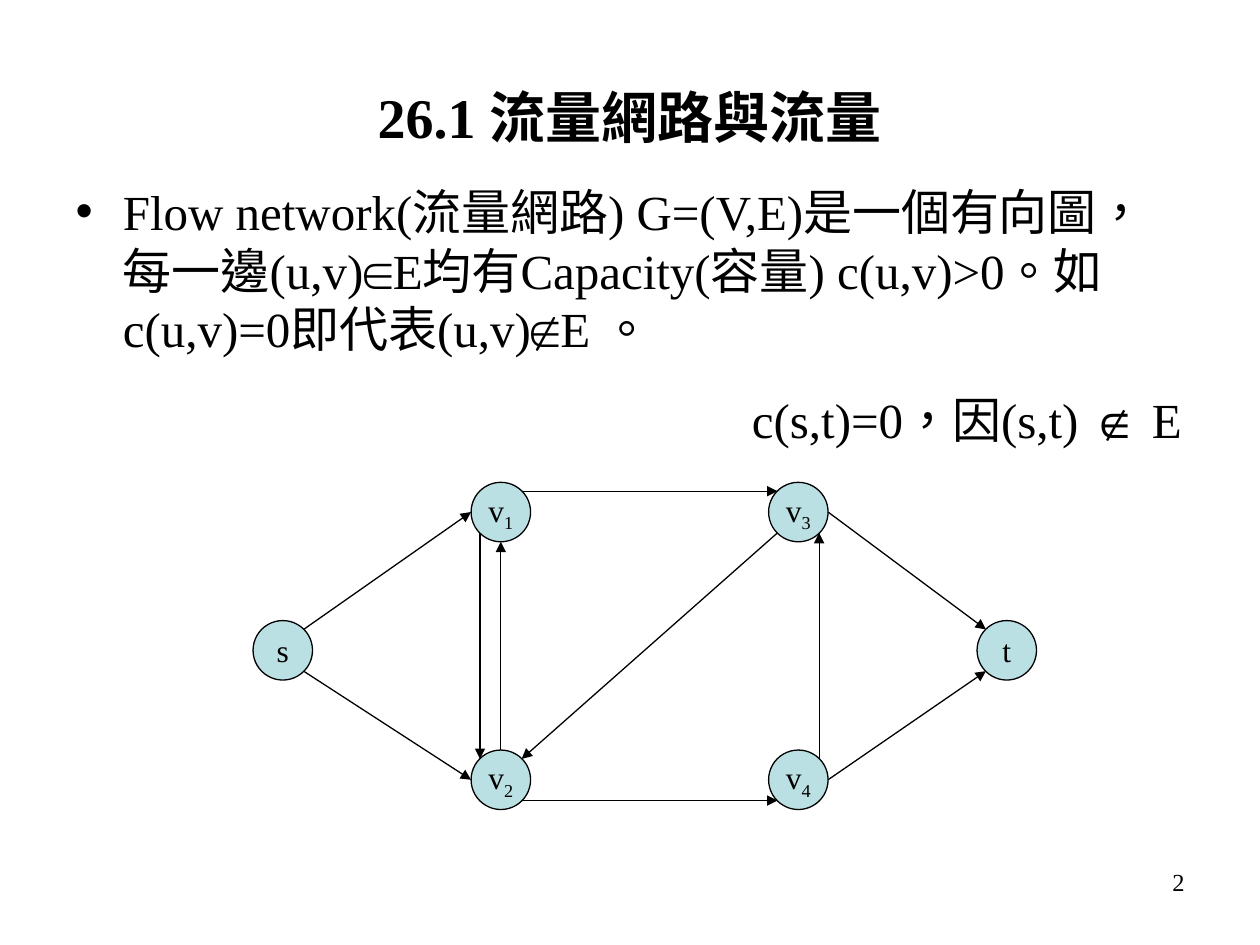
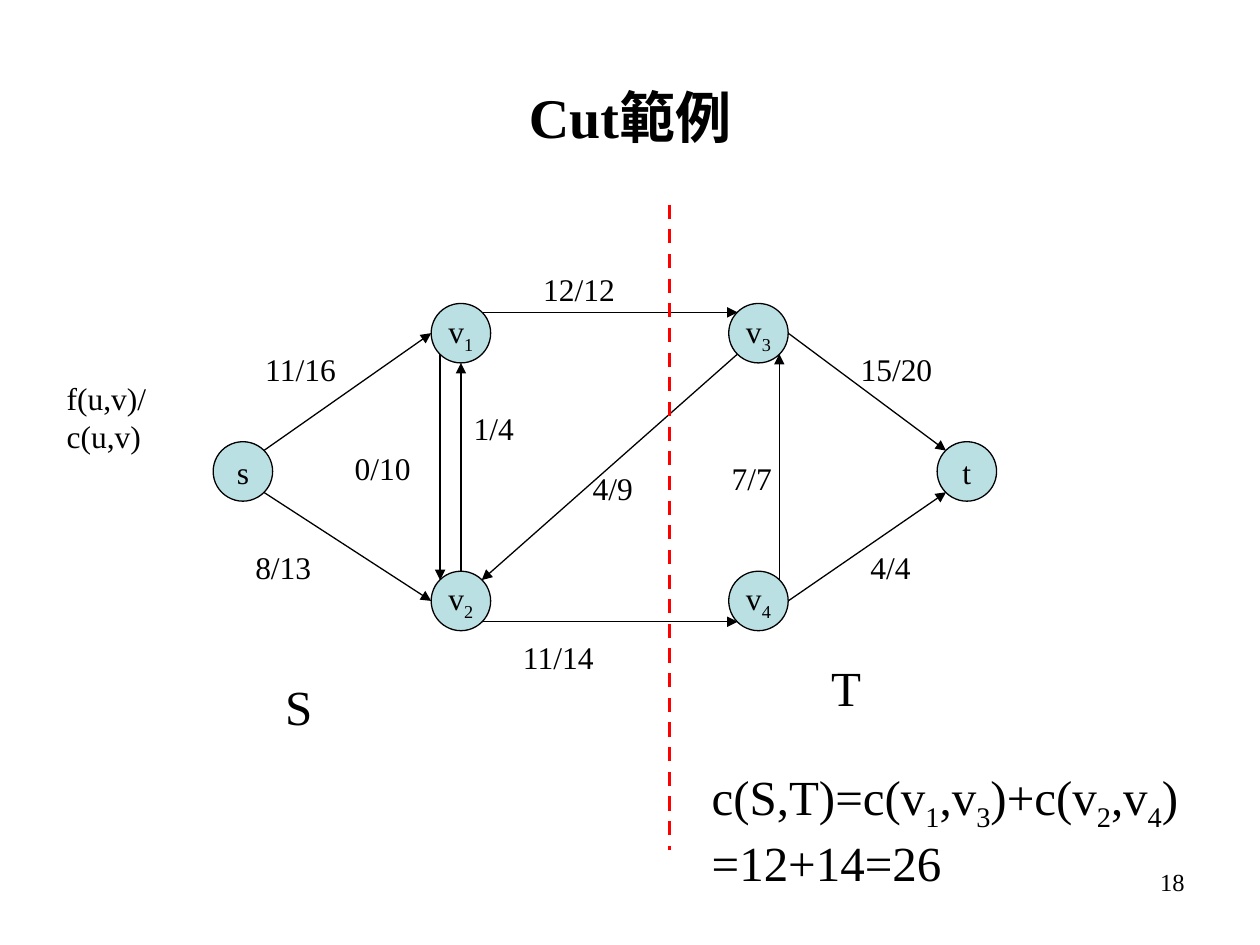
import itertools
from typing import NamedTuple

import pptx
import pptx.dml.color
import pptx.enum.dml
import pptx.enum.lang
import pptx.enum.shapes
import pptx.enum.text
import pptx.oxml
import pptx.oxml.ns
import pptx.util

Pt = pptx.util.Pt
ALIGN = pptx.enum.text.PP_ALIGN
FIT = pptx.enum.text.MSO_AUTO_SIZE
MIDDLE = pptx.enum.text.MSO_ANCHOR.MIDDLE
DASH = pptx.enum.dml.MSO_LINE.DASH

# Shared look
FONT, SYMBOL = "Times New Roman", "Courier New"
BLACK, RED, TEAL = "000000", "FF0000", "BBE0E3"
SMALL, LARGE = 18, 28
SIZE = 34  # node diameter


class Node(NamedTuple):
    text: str
    x: float
    y: float


class Edge(NamedTuple):
    start: str
    out: str
    end: str
    into: str


class Label(NamedTuple):
    text: str
    x: float
    y: float
    w: float = 102
    h: float = 28.8
    size: int = SMALL
    wrap: bool = True


# The flow network, measured from its top left corner
NODES = [
    Node("s", 0, 79),
    Node("v_1", 124.6, 0),
    Node("v_3", 294.6, 0),
    Node("v_2", 124.6, 153),
    Node("v_4", 294.6, 153),
    Node("t", 413.7, 79),
]
EDGES = [
    Edge("s", "ne", "v_1", "w"),
    Edge("s", "se", "v_2", "w"),
    Edge("v_3", "e", "t", "nw"),
    Edge("v_4", "e", "t", "sw"),
    Edge("v_1", "ne", "v_3", "nw"),
    Edge("v_2", "se", "v_4", "sw"),
    Edge("v_2", "n", "v_1", "s"),
    Edge("v_1", "sw", "v_2", "nw"),
    Edge("v_3", "sw", "v_2", "ne"),
    Edge("v_4", "ne", "v_3", "se"),
]
# Points on a node's rim, as shares of its size
RIM = {
    "n": (0.5, 0), "s": (0.5, 1), "w": (0, 0.5), "e": (1, 0.5),
    "nw": (0.15, 0.15), "ne": (0.85, 0.15),
    "sw": (0.15, 0.85), "se": (0.85, 0.85),
}

DEFINE = ("Flow network(流量網路) G=(V,E)是一個有向圖，每一邊(u,v)∈E"
          "均有Capacity(容量) c(u,v)>0。如c(u,v)=0即代表(u,v)∉E 。")
NOTE = Label("c(s,t)=0，因(s,t) ∉ E", 422.6, 218.9, 278, 41, LARGE)
LABELS = [
    Label("f(u,v)/c(u,v)", 31, 213),
    Label("11/16", 144.5, 196.5),
    Label("8/13", 138.8, 309.8),
    Label("0/10", 195.6, 253),
    Label("1/4", 263.6, 230.3),
    Label("12/12", 303.3, 151),
    Label("11/14", 291.8, 360.8),
    Label("4/9", 331.6, 264.4),
    Label("7/7", 411, 258.6),
    Label("15/20", 484.7, 196.5),
    Label("4/4", 490.3, 309.8),
    Label("S", 155.8, 383, 68, 41, LARGE),
    Label("T", 467.8, 372, 68, 41, LARGE),
    Label("c(S,T)=c(v_1,v_3)+c(v_2,v_4)\n=12+14=26",
          399.6, 434.2, 287.3, 74.2, LARGE, False),
]


def color(code: str) -> pptx.dml.color.RGBColor:
    return pptx.dml.color.RGBColor.from_string(code)


def style(para, size: float, align=ALIGN.LEFT, bold: bool = False) -> None:
    para.alignment = align
    font = para.font
    font.name, font.size, font.bold = FONT, Pt(size), bold
    font.color.rgb = color(BLACK)
    font.language_id = pptx.enum.lang.MSO_LANGUAGE_ID.TRADITIONAL_CHINESE


def write(para, text: str) -> None:
    """Add text in which "_" lowers the one character after it."""
    first, *rest = text.split("_")
    para.add_run().text = first
    for part in rest:
        low = para.add_run()
        low.text = part[0]
        low._r.get_or_add_rPr().set("baseline", "-25000")
        if part[1:]:
            para.add_run().text = part[1:]


def place(shape, x: float, y: float, w: float, h: float) -> None:
    shape.left, shape.top = Pt(x), Pt(y)
    shape.width, shape.height = Pt(w), Pt(h)


def add_label(slide, label: Label, align=ALIGN.LEFT) -> None:
    box = slide.shapes.add_textbox(
        Pt(label.x), Pt(label.y), Pt(label.w), Pt(label.h))
    frame = box.text_frame
    frame.word_wrap = label.wrap
    frame.auto_size = FIT.SHAPE_TO_FIT_TEXT
    for row, text in enumerate(label.text.split("\n")):
        para = frame.add_paragraph() if row else frame.paragraphs[0]
        style(para, label.size, align)
        write(para, text)


def add_line(slide, start: tuple, end: tuple, code: str = BLACK,
             width: float = 0.75):
    line = slide.shapes.add_connector(
        pptx.enum.shapes.MSO_CONNECTOR.STRAIGHT,
        *(Pt(value) for value in (*start, *end)))
    line.line.color.rgb = color(code)
    line.line.width = Pt(width)
    props = line._element.spPr
    props.append(pptx.oxml.parse_xml(
        f"<a:effectLst {pptx.oxml.ns.nsdecls('a')}/>"))
    return line


def add_arrow(slide, start: tuple, end: tuple) -> None:
    line = add_line(slide, start, end)
    line.line._get_or_add_ln().append(pptx.oxml.parse_xml(
        f"<a:tailEnd {pptx.oxml.ns.nsdecls('a')} type='triangle'/>"))


def add_node(slide, node: Node, x: float, y: float) -> None:
    oval = slide.shapes.add_shape(
        pptx.enum.shapes.MSO_SHAPE.OVAL,
        Pt(x + node.x), Pt(y + node.y), Pt(SIZE), Pt(SIZE))
    oval.shadow.inherit = False
    oval.fill.solid()
    oval.fill.fore_color.rgb = color(TEAL)
    oval.line.color.rgb = color(BLACK)
    oval.line.width = Pt(0.75)
    frame = oval.text_frame
    frame.word_wrap = False
    frame.vertical_anchor = MIDDLE
    style(frame.paragraphs[0], SMALL, ALIGN.CENTER)
    write(frame.paragraphs[0], node.text)


def add_graph(slide, x: float, y: float) -> None:
    spots = {node.text: node for node in NODES}

    def rim(name: str, side: str) -> tuple:
        node, (right, down) = spots[name], RIM[side]
        return x + node.x + SIZE * right, y + node.y + SIZE * down

    for node in NODES:
        add_node(slide, node, x, y)
    for edge in EDGES:
        add_arrow(slide, rim(edge.start, edge.out), rim(edge.end, edge.into))


def add_slide(deck, layout: int, title: str, number: int):
    slide = deck.slides.add_slide(deck.slide_layouts[layout])
    head = slide.shapes.title
    place(head, 36, 21.6, 648, 90)
    frame = head.text_frame
    frame.auto_size = FIT.NONE
    frame.vertical_anchor = MIDDLE
    style(frame.paragraphs[0], 32, ALIGN.CENTER, True)
    write(frame.paragraphs[0], title)
    add_label(slide, Label(str(number), 516, 492, 168, 37.5, 14), ALIGN.RIGHT)
    return slide


def add_body(slide, text: str) -> None:
    body = slide.placeholders[1]
    place(body, 36, 100, 648, 425.5)
    body.text_frame.auto_size = FIT.NONE
    para = body.text_frame.paragraphs[0]
    style(para, LARGE)
    for sign, chars in itertools.groupby(text, lambda char: char in "∈∉"):
        run = para.add_run()
        run.text = "".join(chars)
        run.font.name = SYMBOL if sign else FONT


def main() -> None:
    deck = pptx.Presentation()
    deck.slide_width, deck.slide_height = Pt(720), Pt(540)

    # Definition of a flow network
    intro = add_slide(deck, 1, "26.1 流量網路與流量", 2)
    add_body(intro, DEFINE)
    add_graph(intro, 144.6, 275.6)
    add_label(intro, NOTE)

    # Example of a cut
    cut = add_slide(deck, 5, "Cut範例", 18)
    add_graph(cut, 121.8, 173.4)
    split = add_line(cut, (382.5, 117), (382.5, 485.5), RED, 2)
    split.line.dash_style = DASH
    for label in LABELS:
        add_label(cut, label)

    deck.save("out.pptx")


if __name__ == "__main__":
    main()
